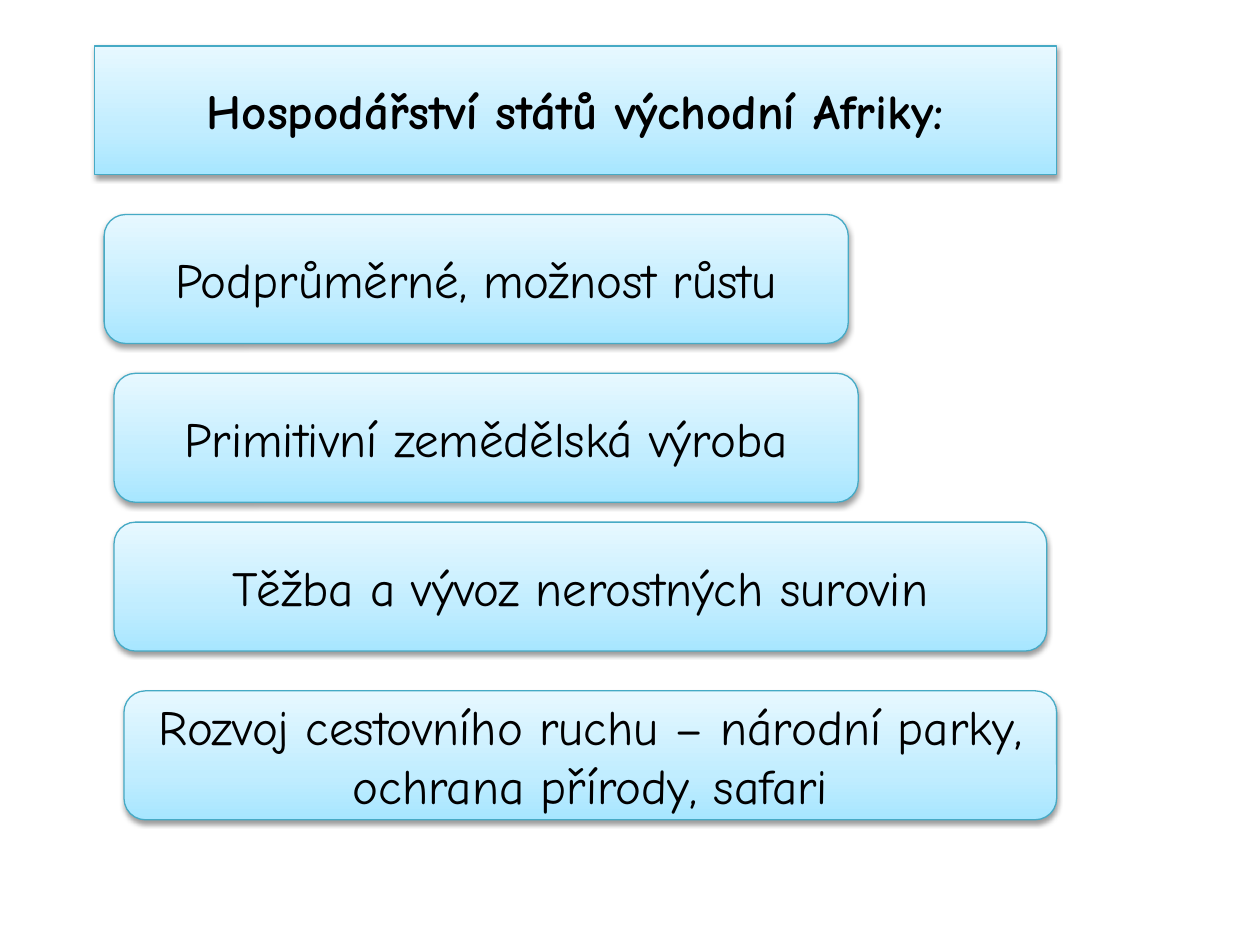
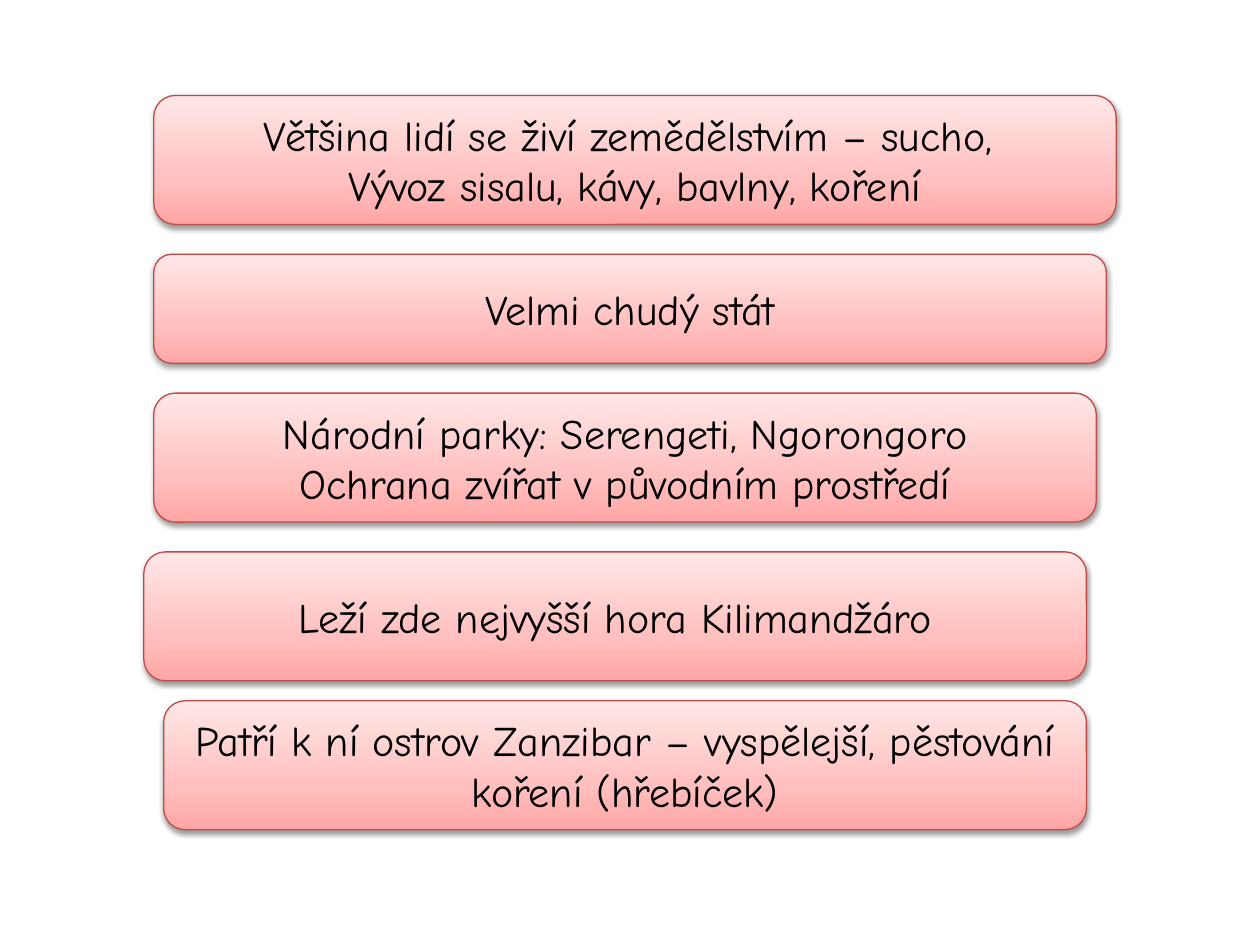
import copy
import dataclasses

import lxml.etree
import pptx
import pptx.dml.color
import pptx.enum.shapes
import pptx.enum.text
import pptx.oxml.ns
import pptx.util

Pt = pptx.util.Pt
qn = pptx.oxml.ns.qn


# Colours, type and grid
@dataclasses.dataclass(frozen=True)
class Tint:
    stops: tuple  # (position, colour), from the bottom up
    edge: str


@dataclasses.dataclass(frozen=True)
class Theme:
    font: str = "Comic Neue"
    ink: str = "000000"
    large: int = 28
    small: int = 24
    line: float = 0.75
    step: float = 5.67  # grid of 2 mm
    left: float = 2.83  # grid origin
    top: float = 3.54
    blue: Tint = Tint(((0, "A7E6FF"), (0.35, "C1EDFF"), (1, "E7F8FF")), "46AAC5")
    red: Tint = Tint(((0, "FFA6A5"), (0.35, "FFC0BF"), (1, "FFE7E7")), "BF4C48")


THEME = Theme()
TALL, LOW = 13, 11  # box heights in grid steps

# Each box: left, top, width, height in grid steps, then its text
TITLE = (9, 4, 97, TALL, "Hospodářství států východní Afriky:")
TRADE = [
    (10, 21, 75, TALL, "Podprůměrné, možnost růstu"),
    (11, 37, 75, TALL, "Primitivní zemědělská výroba"),
    (11, 52, 94, TALL, "Těžba a vývoz nerostných surovin"),
    (12, 69, 94, TALL, "Rozvoj cestovního ruchu – národní parky, ochrana přírody, safari"),
]
STATE = [
    (15, 9, 97, TALL, "Většina lidí se živí zemědělstvím – sucho, \nVývoz sisalu, kávy, bavlny, koření"),
    (15, 25, 96, LOW, "Velmi chudý stát"),
    (15, 39, 95, TALL, "Národní parky: Serengeti, Ngorongoro\nOchrana zvířat v původním prostředí"),
    (14, 55, 95, TALL, "Leží zde nejvyšší hora Kilimandžáro"),
    (16, 70, 93, TALL, "Patří k ní ostrov Zanzibar – vyspělejší, pěstování koření (hřebíček)"),
]


def paint(color, code):
    color.rgb = pptx.dml.color.RGBColor.from_string(code)


def frame(left, top, width, height):
    """Turn grid steps into lengths."""
    step = THEME.step
    return (Pt(THEME.left + left * step), Pt(THEME.top + top * step),
            Pt(width * step), Pt(height * step))


def shade(shape):
    """Give the shape a soft shadow that falls straight down."""
    shape.shadow.inherit = False
    effects = shape._element.spPr.find(qn("a:effectLst"))
    outer = lxml.etree.SubElement(effects, qn("a:outerShdw"), blurRad=str(Pt(3.15)),
                                  dist=str(Pt(1.57)), dir="5400000", rotWithShape="0")
    black = lxml.etree.SubElement(outer, qn("a:srgbClr"), val="000000")
    lxml.etree.SubElement(black, qn("a:alpha"), val="38000")


def coat(shape, tint):
    """Fill, outline and shade the shape."""
    shape.fill.gradient()
    shape.fill.gradient_angle = 90
    stops = shape._element.spPr.find(qn("a:gradFill")).find(qn("a:gsLst"))
    stops.append(copy.deepcopy(stops[0]))
    for stop, (place, code) in zip(shape.fill.gradient_stops, tint.stops):
        stop.position = place
        paint(stop.color, code)
    paint(shape.line.color, tint.edge)
    shape.line.width = Pt(THEME.line)
    shade(shape)


def write(shape, text, size, bold=False):
    body = shape.text_frame
    body.text = text
    body.word_wrap = True
    body.auto_size = pptx.enum.text.MSO_AUTO_SIZE.NONE
    body.vertical_anchor = pptx.enum.text.MSO_ANCHOR.MIDDLE
    for para in body.paragraphs:
        para.alignment = pptx.enum.text.PP_ALIGN.CENTER
        para.font.name = THEME.font
        para.font.size = Pt(size)
        para.font.bold = bold
        paint(para.font.color, THEME.ink)


def add_box(slide, item, tint, size):
    *place, text = item
    kind = pptx.enum.shapes.MSO_SHAPE.ROUNDED_RECTANGLE
    box = slide.shapes.add_shape(kind, *frame(*place))
    coat(box, tint)
    write(box, text, size)


def set_title(slide, item, tint, size):
    """Turn the title placeholder into a rounded box."""
    *place, text = item
    title = slide.shapes.title
    title.left, title.top, title.width, title.height = frame(*place)
    shell = lxml.etree.SubElement(title._element.spPr, qn("a:prstGeom"), prst="roundRect")
    lxml.etree.SubElement(shell, qn("a:avLst"))
    coat(title, tint)
    write(title, text, size, bold=True)


def main():
    deck = pptx.Presentation()
    deck.slide_width, deck.slide_height = Pt(720), Pt(540)
    titled, blank = deck.slide_layouts[5], deck.slide_layouts[6]

    # Economy of the region
    slide = deck.slides.add_slide(titled)
    set_title(slide, TITLE, THEME.blue, THEME.large)
    for item in TRADE:
        add_box(slide, item, THEME.blue, THEME.large)

    # Facts on one state
    slide = deck.slides.add_slide(blank)
    for item in STATE:
        add_box(slide, item, THEME.red, THEME.small)

    deck.save("out.pptx")


if __name__ == "__main__":
    main()
